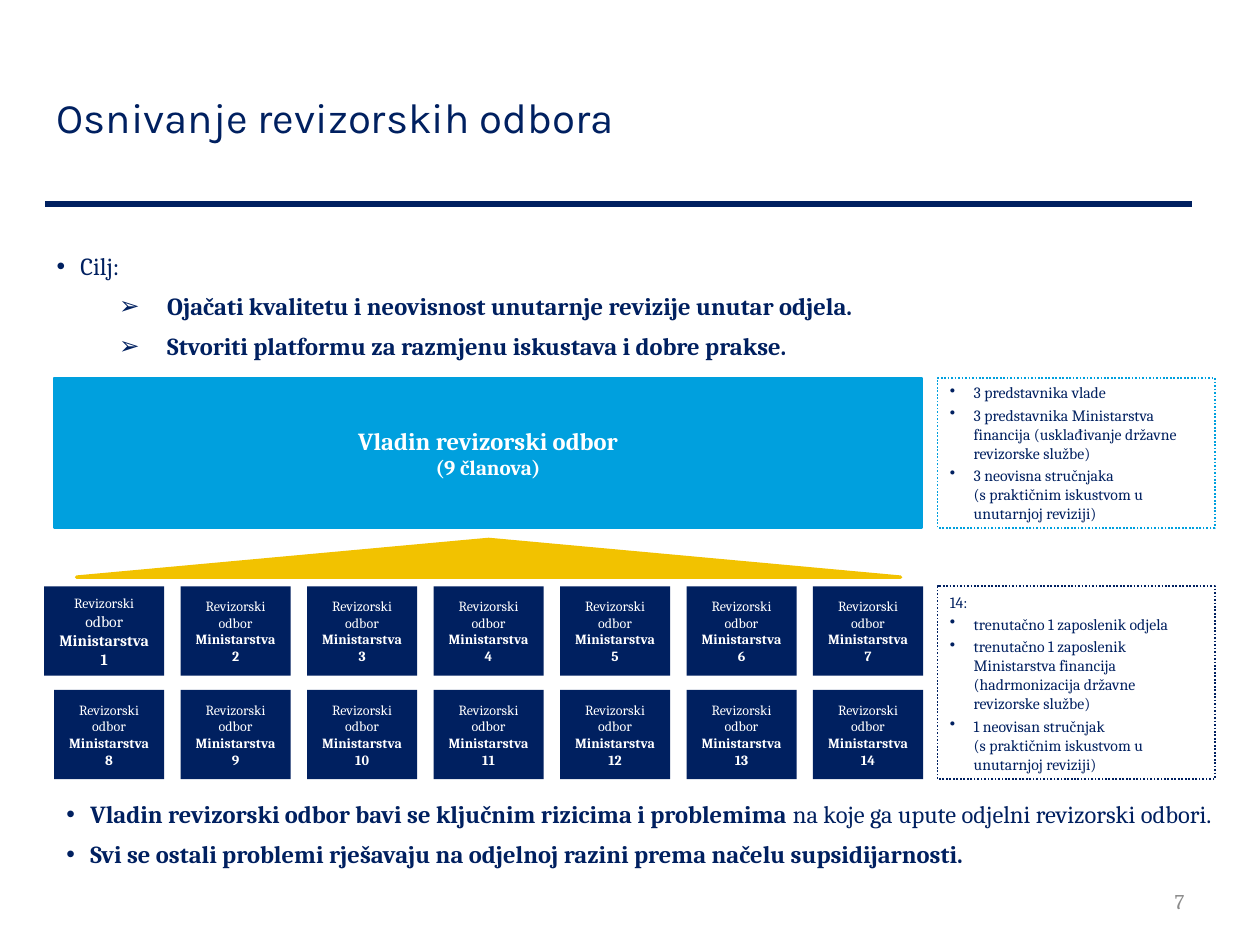
"""Build the slide on setting up audit committees."""
from lxml.etree import SubElement
from pptx import Presentation
from pptx.dml.color import RGBColor
from pptx.enum.dml import MSO_LINE
from pptx.enum.shapes import MSO_CONNECTOR, MSO_SHAPE as Shape
from pptx.enum.text import MSO_ANCHOR as Anchor, MSO_AUTO_SIZE, PP_ALIGN as Align
from pptx.oxml.ns import qn
from pptx.util import Cm, Pt

NAVY, BLUE, YELLOW, WHITE, GREY = "002060", "00A0DE", "F2C200", "FFFFFF", "8C8C8C"
FONT = "Cambria"
DOT, ARROW = ("•", 0.48, 0.48), ("➢", 2.23, 0.97)

TITLE = [(None, [("Osnivanje revizorskih odbora", 24, False)])]
GOALS = [
    (DOT, [("Cilj:", 14, False)]),
    (ARROW, [("Ojačati kvalitetu i neovisnost unutarnje revizije unutar odjela.", 14, True)]),
    (ARROW, [("Stvoriti platformu za razmjenu iskustava i dobre prakse.", 14, True)]),
]
GOVERNMENT = [
    (None, [("Vladin revizorski odbor", 14, True)]),
    (None, [("(9 članova)", 12, True)]),
]
GOVERNMENT_MEMBERS = [
    (DOT, [("3 predstavnika vlade", 9, False)]),
    (DOT, [("3 predstavnika Ministarstva financija (usklađivanje državne revizorske službe)", 9, False)]),
    (DOT, [("3 neovisna stručnjaka\n(s praktičnim iskustvom u unutarnjoj reviziji)", 9, False)]),
]
MINISTRY_MEMBERS = [
    (None, [("14:", 9, False)]),
    (DOT, [("trenutačno 1 zaposlenik odjela", 9, False)]),
    (DOT, [("trenutačno 1 zaposlenik Ministarstva financija (hadrmonizacija državne revizorske službe)", 9, False)]),
    (DOT, [("1 neovisan stručnjak\n(s praktičnim iskustvom u unutarnjoj reviziji)", 9, False)]),
]
CONCLUSIONS = [
    (DOT, [("Vladin revizorski odbor bavi se ključnim rizicima i problemima ", 14, True),
           ("na koje ga upute odjelni revizorski odbori.", 14, False)]),
    (DOT, [("Svi se ostali problemi rješavaju na odjelnoj razini prema načelu supsidijarnosti.", 14, True)]),
]
PAGE_NUMBER = [(None, [("7", 12, False)])]

MINISTRIES, COLUMNS = 14, 7
GRID_LEFT, GRID_TOP, CELL_W, CELL_H = 1.09, 11.82, 2.22, 1.8
PITCH_X, PITCH_Y = 2.55, 2.09
FIRST_EXTRA = 0.2


def rgb(color):
    return RGBColor.from_string(color)


def write(sp, paragraphs, color, align=Align.LEFT, space=0, anchor=Anchor.TOP, font=FONT, inset=0.13):
    tf = sp.text_frame
    tf.word_wrap, tf.auto_size, tf.vertical_anchor = True, MSO_AUTO_SIZE.NONE, anchor
    tf.margin_left = tf.margin_right = Cm(0.25)
    tf.margin_top = tf.margin_bottom = Cm(inset)
    for i, (bullet, runs) in enumerate(paragraphs):
        p = tf.add_paragraph() if i else tf.paragraphs[0]
        p.alignment = align
        p.space_before = p.space_after = Pt(space)
        if bullet:
            mark, left, hang = bullet
            pPr = p._p.get_or_add_pPr()
            pPr.set("marL", str(Cm(left)))
            pPr.set("indent", str(-Cm(hang)))
            SubElement(pPr, qn("a:buChar"), char=mark)
        for text, size, bold in runs:
            for j, line in enumerate(text.split("\n")):
                if j:
                    p.add_line_break()
                r = p.add_run()
                r.text = line
                r.font.name, r.font.size, r.font.bold = font, Pt(size), bold
                r.font.color.rgb = rgb(color)


def place(sp, left, top, width, height):
    sp.left, sp.top, sp.width, sp.height = Cm(left), Cm(top), Cm(width), Cm(height)


def add_box(slide, box, fill=None, line=None, weight=1, kind=Shape.RECTANGLE):
    sp = slide.shapes.add_shape(kind, *map(Cm, box))
    sp.shadow.inherit = False
    if fill:
        sp.fill.solid()
        sp.fill.fore_color.rgb = rgb(fill)
    else:
        sp.fill.background()
    if line:
        sp.line.color.rgb = rgb(line)
        sp.line.width = Pt(weight)
    else:
        sp.line.fill.background()
    return sp


def add_members(slide, box, line, paragraphs):
    sp = add_box(slide, box, line=line)
    sp.line.dash_style = MSO_LINE.ROUND_DOT
    write(sp, paragraphs, NAVY, space=1, anchor=Anchor.MIDDLE, inset=0.25)


def add_ministry(slide, index):
    row, column = divmod(index, COLUMNS)
    extra, size = (FIRST_EXTRA, 9) if index == 0 else (0, 8)
    left, top = GRID_LEFT + column * PITCH_X - extra, GRID_TOP + row * PITCH_Y
    sp = add_box(slide, (left, top, CELL_W + extra, CELL_H), NAVY)
    label = [
        (None, [("Revizorski", 8, False), (" odbor", size, False)]),
        (None, [(f"Ministarstva {index + 1}", size, True)]),
    ]
    write(sp, label, WHITE, Align.CENTER, anchor=Anchor.MIDDLE, inset=0.25)


def main():
    prs = Presentation()
    prs.slide_width, prs.slide_height = Cm(25.4), Cm(19.05)
    slide = prs.slides.add_slide(prs.slide_layouts[3])
    title, goals, conclusions = slide.placeholders

    place(title, 0.89, 0.76, 23.24, 3.18)
    write(title, TITLE, NAVY, anchor=Anchor.MIDDLE, font="Karla")
    rule = slide.shapes.add_connector(MSO_CONNECTOR.STRAIGHT, Cm(0.91), Cm(4.11), Cm(24.03), Cm(4.11))
    rule.line.color.rgb = rgb(NAVY)
    rule.line.width = Pt(3)
    SubElement(rule._element.spPr, qn("a:effectLst"))

    place(goals, 0.89, 4.93, 23.8, 2.49)
    write(goals, GOALS, NAVY, space=3)
    place(conclusions, 1.09, 15.98, 24, 2.26)
    write(conclusions, CONCLUSIONS, NAVY, space=3)

    government = add_box(slide, (1.09, 7.62, 17.5, 3.02), BLUE, BLUE, 1.5)
    write(government, GOVERNMENT, WHITE, Align.CENTER, anchor=Anchor.MIDDLE, inset=0.25)
    roof = add_box(slide, (9.47, 2.95, 0.76, 16.61), YELLOW, YELLOW, 2, Shape.PENTAGON)
    roof.rotation = 270
    roof.adjustments[0] = 1
    for index in range(MINISTRIES):
        add_ministry(slide, index)

    add_members(slide, (18.9, 7.62, 5.59, 3.02), BLUE, GOVERNMENT_MEMBERS)
    add_members(slide, (18.9, GRID_TOP, 5.59, PITCH_Y + CELL_H), NAVY, MINISTRY_MEMBERS)

    number = slide.shapes.add_textbox(Cm(18.21), Cm(17.65), Cm(5.92), Cm(1.02))
    write(number, PAGE_NUMBER, GREY, Align.RIGHT, anchor=Anchor.MIDDLE)
    prs.save("out.pptx")


if __name__ == "__main__":
    main()
